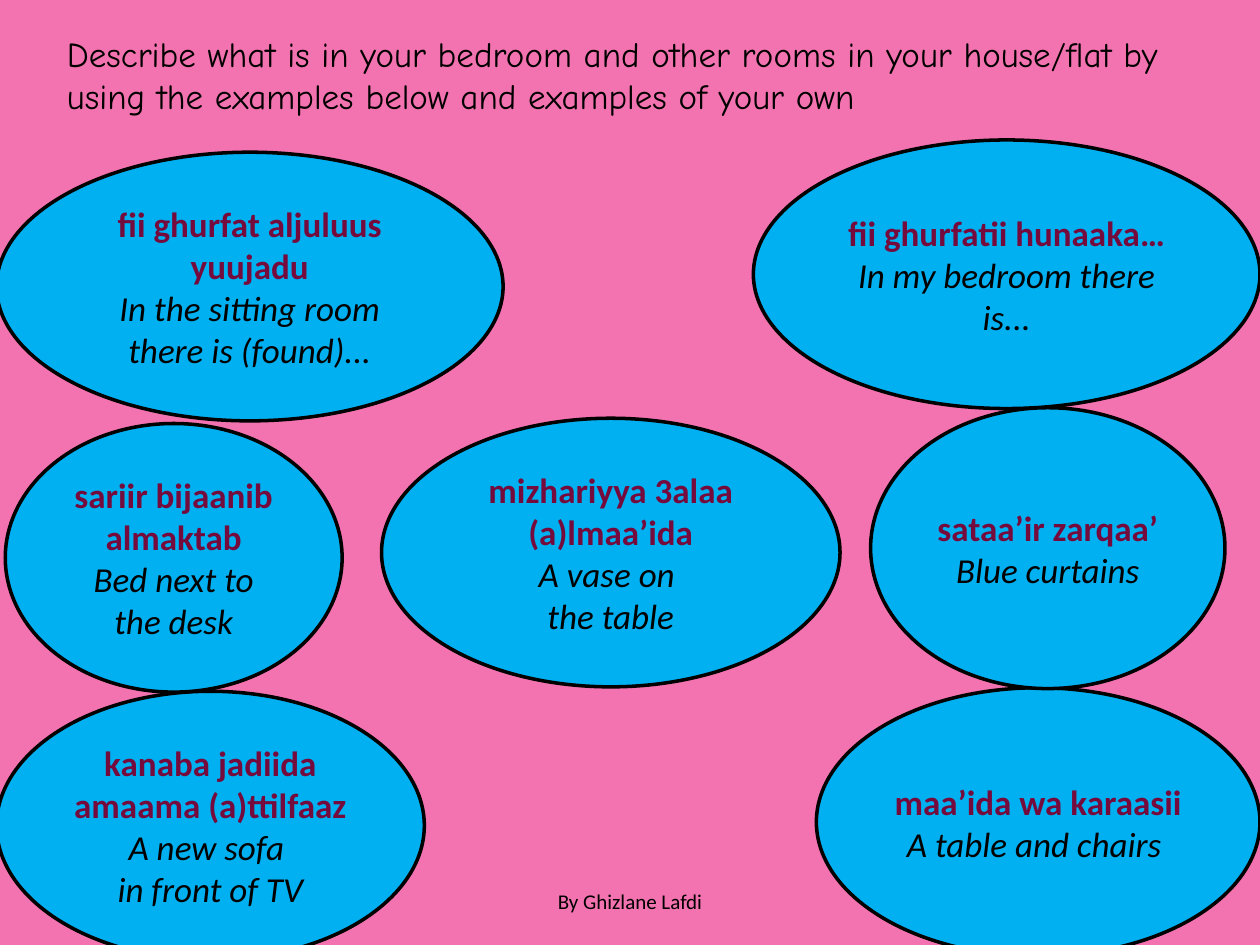
from pptx import Presentation
from pptx import util as u
from pptx.dml.color import RGBColor
from pptx.enum import shapes, text

PINK, BLUE, PLUM, BLACK = "F273AF", "00B0F0", "750B3D", "000000"


def rgb(value):
    return RGBColor.from_string(value)


class Page:
    """Holds the style and the current slide."""
    body_font, title_font = "Calibri", "Comic Neue"
    size, small, outline = 20, 12, 2

    def __init__(self, slide):
        self.slide = slide

    def place(self, sp, box):
        sp.left, sp.top, sp.width, sp.height = [u.Pt(v) for v in box]

    def run(self, p, words, font, size, color, bold=False, italic=False):
        r = p.add_run()
        r.text = words
        r.font.name, r.font.size = font, u.Pt(size)
        r.font.bold, r.font.italic = bold, italic
        r.font.color.rgb = rgb(color)

    def shape(self, kind, box, fill, line=None):
        sp = self.slide.shapes.add_shape(kind, *[u.Pt(v) for v in box])
        sp.shadow.inherit = False
        sp.fill.solid()
        sp.fill.fore_color.rgb = rgb(fill)
        if line:
            sp.line.color.rgb = rgb(line)
            sp.line.width = u.Pt(self.outline)
        else:
            sp.line.fill.background()
        return sp

    def backdrop(self, box, fill):
        sp = self.shape(shapes.MSO_SHAPE.RECTANGLE, box, fill)
        # Send behind the title placeholder
        self.slide.shapes._spTree.insert(2, sp._element)

    def title(self, box, words):
        sp = self.slide.shapes.title
        self.place(sp, box)
        tf = sp.text_frame
        tf.word_wrap = True
        tf.auto_size = text.MSO_AUTO_SIZE.SHAPE_TO_FIT_TEXT
        tf.vertical_anchor = text.MSO_ANCHOR.TOP
        p = tf.paragraphs[0]
        p.alignment = text.PP_ALIGN.LEFT
        self.run(p, words, self.title_font, self.size, BLACK)

    def bubble(self, box, phrase, *meaning):
        sp = self.shape(shapes.MSO_SHAPE.OVAL, box, BLUE, BLACK)
        tf = sp.text_frame
        tf.word_wrap = True
        tf.vertical_anchor = text.MSO_ANCHOR.MIDDLE
        p = tf.paragraphs[0]
        p.alignment = text.PP_ALIGN.CENTER
        self.run(p, phrase, self.body_font, self.size, PLUM, bold=True)
        for words in meaning:
            p = tf.add_paragraph()
            p.alignment = text.PP_ALIGN.CENTER
            self.run(p, words, self.body_font, self.size, BLACK, italic=True)

    def credit(self, box, words):
        sp = self.slide.shapes.add_textbox(*[u.Pt(v) for v in box])
        tf = sp.text_frame
        tf.word_wrap = True
        tf.vertical_anchor = text.MSO_ANCHOR.MIDDLE
        p = tf.paragraphs[0]
        p.alignment = text.PP_ALIGN.CENTER
        self.run(p, words, self.body_font, self.small, BLACK)


BUBBLES = [
    ((430.5, 80, 289.5, 153.5), "fii ghurfatii hunaaka…", "In my bedroom there is..."),
    ((466.5, 393, 253.5, 153.5), "maa’ida wa karaasii", "A table and chairs "),
    ((218, 239, 262, 153.5), "mizhariyya 3alaa (a)lmaa’ida", "A vase on ", "the table"),
    ((497.5, 233, 202.5, 160.5), "sataa’ir zarqaa’", "Blue curtains"),
    ((-2, 395, 244.5, 153.5), "kanaba jadiida amaama (a)ttilfaaz", "A new sofa ", "in front of TV"),
    ((3, 242, 192.5, 153.5), "sariir bijaanib almaktab", "Bed next to the desk"),
    ((-2, 87, 289.5, 153.5), "fii ghurfat aljuluus yuujadu",
     "In the sitting room there is (found)..."),
]


def main():
    prs = Presentation()
    prs.slide_width, prs.slide_height = u.Pt(720), u.Pt(540)
    page = Page(prs.slides.add_slide(prs.slide_layouts[5]))

    # Background and instruction
    page.backdrop((0, 0, 720, 552), PINK)
    page.title((31, 15, 669, 55.5),
               "Describe what is in your bedroom and other rooms in your "
               "house/flat by using the examples below and examples of your own")

    # Phrases with their meanings
    for box, phrase, *meaning in BUBBLES:
        page.bubble(box, phrase, *meaning)

    # Author
    page.credit((246, 500.5, 228, 28.75), "By Ghizlane Lafdi")

    prs.save("out.pptx")


if __name__ == "__main__":
    main()
